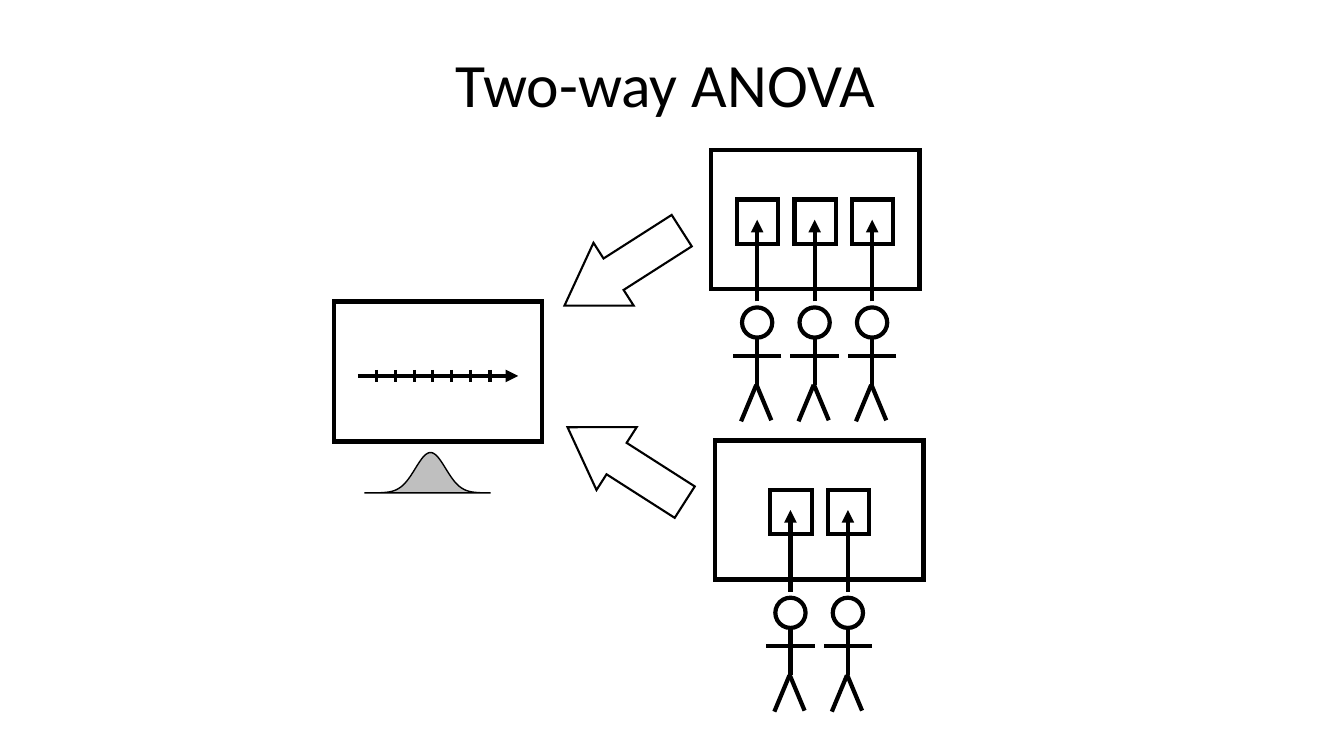
"""Draw a slide that explains two-way ANOVA with panels, people and a distribution."""
import math
from dataclasses import dataclass

from lxml import etree
from pptx import Presentation
from pptx import util as u
from pptx.dml.color import RGBColor
from pptx.enum import shapes, text
from pptx.oxml.ns import qn

PX = 9144


@dataclass(frozen=True)
class Theme:
    ink: RGBColor = RGBColor(0x00, 0x00, 0x00)
    paper: RGBColor = RGBColor(0xFF, 0xFF, 0xFF)
    curve: RGBColor = RGBColor(0xBF, 0xBF, 0xBF)
    font: str = "Calibri"
    title_size: float = 44
    heavy: float = 3
    tick: float = 2.25
    arrow: float = 1.5
    thin: float = 1


@dataclass(frozen=True)
class Panel:
    left: int
    top: int
    people: int


@dataclass(frozen=True)
class Stroke:
    x1: int
    y1: int
    x2: int
    y2: int
    arrow: bool = False


@dataclass(frozen=True)
class BlockArrow:
    left: int
    top: int
    rotation: float


THEME = Theme()
PANEL_WIDTH, PANEL_HEIGHT = 207, 138
PERSON_PITCH = 57
PANELS = [Panel(709, 437, 2), Panel(705, 149, 3)]
PERSON_STROKES = [
    Stroke(0, 185, 0, 233),
    Stroke(-1, 233, -16, 269),
    Stroke(-1, 232, 14, 268),
    Stroke(24, 204, -24, 204),
    Stroke(0, 150, 0, 69, arrow=True),
]
BLOCK_ARROWS = [BlockArrow(549, 229, 147.4), BlockArrow(552, 424, 212.6)]
TICK_COUNT, TICK_LEFT, TICK_SPAN = 7, 373, 113
CURVE_LEFT, CURVE_RIGHT, CURVE_CENTER, CURVE_BASE = 362, 486, 427, 489
CURVE_HEIGHT, CURVE_SIGMA = 40, 15


def add_line_part(shape, tag: str, **attributes: str) -> None:
    """Append a join or an arrowhead to the outline of a shape."""
    outline = shape._element.spPr.find(qn("a:ln"))
    etree.SubElement(outline, qn(tag), **attributes)


def style_shape(shape, fill: RGBColor, width: float) -> None:
    """Give a shape its fill and outline."""
    shape.shadow.inherit = False
    shape.fill.solid()
    shape.fill.fore_color.rgb = fill
    shape.line.color.rgb = THEME.ink
    shape.line.width = u.Pt(width)
    add_line_part(shape, "a:miter", lim="800000")


def draw_shape(canvas, kind, left: int, top: int, width: int, height: int,
               weight: float = THEME.heavy):
    """Draw an outlined preset shape."""
    shape = canvas.add_shape(kind, left * PX, top * PX, width * PX, height * PX)
    style_shape(shape, THEME.paper, weight)
    return shape


def draw_stroke(canvas, stroke: Stroke, left: int = 0, top: int = 0,
                weight: float = THEME.heavy) -> None:
    """Draw a straight line, with an arrowhead if the stroke has one."""
    connector = canvas.add_connector(
        shapes.MSO_CONNECTOR.STRAIGHT,
        (left + stroke.x1) * PX, (top + stroke.y1) * PX,
        (left + stroke.x2) * PX, (top + stroke.y2) * PX)
    connector.line.color.rgb = THEME.ink
    connector.line.width = u.Pt(weight)
    if stroke.arrow:
        add_line_part(connector, "a:tailEnd", type="triangle")
    etree.SubElement(connector._element.spPr, qn("a:effectLst"))


def draw_panel(slide, panel: Panel) -> None:
    """Draw a panel with one box and one person for each member."""
    canvas = slide.shapes.add_group_shape().shapes
    rectangle = shapes.MSO_SHAPE.RECTANGLE
    draw_shape(canvas, rectangle, panel.left, panel.top, PANEL_WIDTH, PANEL_HEIGHT)
    first = panel.left + (PANEL_WIDTH - (panel.people - 1) * PERSON_PITCH) // 2
    centers = [first + index * PERSON_PITCH for index in range(panel.people)]
    for center in centers:
        draw_shape(canvas, rectangle, center - 20, panel.top + 49, 41, 44)
    for center in centers:
        draw_shape(canvas, shapes.MSO_SHAPE.OVAL, center - 15, panel.top + 156, 30, 30)
        for stroke in PERSON_STROKES:
            draw_stroke(canvas, stroke, center, panel.top)


def draw_curve(canvas) -> None:
    """Draw the filled normal curve."""
    builder = canvas.build_freeform(CURVE_LEFT * PX, CURVE_BASE * PX)
    points = []
    for x in range(CURVE_LEFT, CURVE_RIGHT + 1):
        deviation = (x - CURVE_CENTER) / CURVE_SIGMA
        height = CURVE_HEIGHT * math.exp(-deviation ** 2 / 2)
        points.append((x * PX, round((CURVE_BASE - height) * PX)))
    builder.add_line_segments(points + [(CURVE_RIGHT * PX, CURVE_BASE * PX)])
    style_shape(builder.convert_to_shape(), THEME.curve, THEME.thin)


def draw_outcome(slide) -> None:
    """Draw the measurement scale in its panel, above its distribution."""
    canvas = slide.shapes.add_group_shape().shapes
    draw_shape(canvas, shapes.MSO_SHAPE.RECTANGLE, 331, 299, PANEL_WIDTH, 139)
    draw_stroke(canvas, Stroke(355, 373, 514, 373, arrow=True))
    for index in range(TICK_COUNT):
        x = TICK_LEFT + round(index * TICK_SPAN / (TICK_COUNT - 1))
        draw_stroke(canvas, Stroke(x, 367, x, 379), weight=THEME.tick)
    draw_curve(canvas)


def write_title(slide) -> None:
    """Fill and format the title placeholder."""
    title = slide.shapes.title
    title.left, title.top, title.width, title.height = (
        length * PX for length in (92, 40, 1150, 94))
    frame = title.text_frame
    frame.text = "Two-way ANOVA "
    frame.auto_size = text.MSO_AUTO_SIZE.NONE
    frame.vertical_anchor = text.MSO_ANCHOR.MIDDLE
    paragraph = frame.paragraphs[0]
    paragraph.alignment = text.PP_ALIGN.CENTER
    paragraph.line_spacing = 0.9
    font = paragraph.runs[0].font
    font.name = THEME.font
    font.size = u.Pt(THEME.title_size)
    font.color.rgb = THEME.ink


def main() -> None:
    """Build the slide and save it."""
    presentation = Presentation()
    presentation.slide_width, presentation.slide_height = 1333 * PX, 750 * PX
    slide = presentation.slides.add_slide(presentation.slide_layouts[5])
    write_title(slide)
    for panel in PANELS:
        draw_panel(slide, panel)
    draw_outcome(slide)
    for arrow in BLOCK_ARROWS:
        shape = draw_shape(slide.shapes, shapes.MSO_SHAPE.RIGHT_ARROW,
                           arrow.left, arrow.top, 138, 74, THEME.arrow)
        shape.rotation = arrow.rotation
        shape.adjustments[0] = 0.5
        shape.adjustments[1] = 0.78
    presentation.save("out.pptx")


if __name__ == "__main__":
    main()
